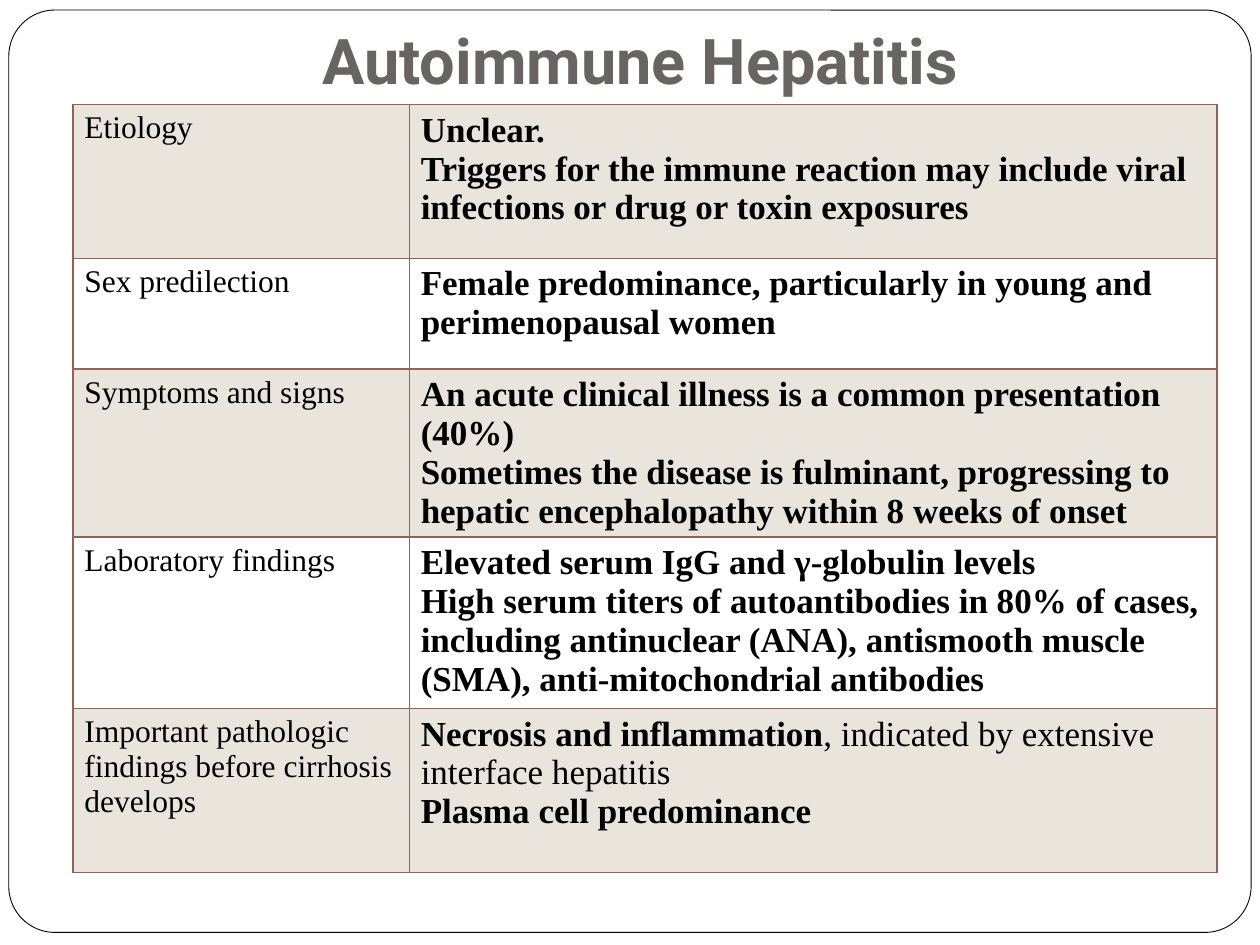
from lxml import etree
from pptx import Presentation
from pptx.dml.color import RGBColor
from pptx.enum.shapes import MSO_SHAPE as SHAPE
from pptx.enum.text import MSO_ANCHOR as ANCHOR, MSO_AUTO_SIZE as AUTOSIZE, PP_ALIGN as ALIGN
from pptx.oxml.ns import qn
from pptx.util import Inches, Pt

WHITE = RGBColor(0xFF, 0xFF, 0xFF)
BLACK = RGBColor(0x00, 0x00, 0x00)
GRAY = RGBColor(0x69, 0x64, 0x64)
BEIGE = RGBColor(0xE9, 0xE5, 0xDC)
BROWN = RGBColor(0x95, 0x62, 0x51)

# Each finding: label, then paragraphs made of (text, bold) runs
FINDINGS = [
    ("Etiology", [
        [("Unclear.", True)],
        [("Triggers for the immune reaction may include viral infections "
          "or drug or toxin exposures", True)]]),
    ("Sex predilection", [
        [("Female predominance, particularly in young and perimenopausal women", True)]]),
    ("Symptoms and signs", [
        [("An acute clinical illness is a common presentation (40%)", True)],
        [("Sometimes the disease is fulminant, progressing to hepatic "
          "encephalopathy within 8 weeks of onset", True)]]),
    ("Laboratory findings", [
        [("Elevated serum IgG and γ-globulin levels", True)],
        [("High serum titers of autoantibodies in 80% of cases, including antinuclear "
          "(ANA), antismooth muscle (SMA), anti-mitochondrial antibodies", True)]]),
    ("Important pathologic findings before cirrhosis develops", [
        [("Necrosis and inflammation", True),
         (", indicated by extensive interface hepatitis", False)],
        [("Plasma cell predominance", True)]]),
]
COL_WIDTHS = [2.67, 6.41]
ROW_HEIGHTS = [1.22, 0.88, 1.24, 1.36, 1.3]


def write(tf, paragraphs, size=20, font="Times New Roman", color=BLACK, align=ALIGN.LEFT):
    """Fill a text frame with paragraphs of (text, bold) runs."""
    for i, runs in enumerate(paragraphs):
        p = tf.add_paragraph() if i else tf.paragraphs[0]
        p.alignment = align
        for text, bold in runs:
            r = p.add_run()
            r.text = text
            r.font.name, r.font.size, r.font.bold = font, Pt(size), bold
            r.font.color.rgb = color


class SlideBuilder:
    border_color = BROWN
    border_width = Pt(1)
    band_fills = (BEIGE, WHITE)

    def __init__(self, slide):
        self.s = slide

    def frame(self, x, y, w, h):
        sp = self.s.shapes.add_shape(
            SHAPE.ROUNDED_RECTANGLE, Inches(x), Inches(y), Inches(w), Inches(h))
        sp.adjustments[0] = 0.05
        sp.shadow.inherit = False
        sp.fill.solid()
        sp.fill.fore_color.rgb = WHITE
        sp.line.color.rgb = BLACK
        sp.line.width = Pt(0.5)
        # Send behind the title
        self.s.shapes._spTree.insert(2, sp._element)

    def title(self, text, x, y, w, h):
        sp = self.s.shapes.title
        sp.left, sp.top, sp.width, sp.height = map(Inches, (x, y, w, h))
        tf = sp.text_frame
        tf.auto_size = AUTOSIZE.NONE
        tf.vertical_anchor = ANCHOR.TOP
        tf.margin_top = 0
        write(tf, [[(text, True)]], size=36, font="Roboto", color=GRAY, align=ALIGN.CENTER)

    def borders(self, cell):
        tc_pr = cell._tc.get_or_add_tcPr()
        for side in ("lnL", "lnR", "lnT", "lnB"):
            ln = etree.SubElement(tc_pr, qn(f"a:{side}"), w=str(self.border_width))
            fill = etree.SubElement(ln, qn("a:solidFill"))
            etree.SubElement(fill, qn("a:srgbClr"), val=str(self.border_color))

    def cell(self, cell, paragraphs, fill, size):
        cell.margin_left = cell.margin_right = Inches(0.09)
        cell.margin_top = cell.margin_bottom = Inches(0.05)
        self.borders(cell)
        cell.fill.solid()
        cell.fill.fore_color.rgb = fill
        write(cell.text_frame, paragraphs, size=size)

    def table(self, rows, x, y):
        table = self.s.shapes.add_table(
            len(rows), len(COL_WIDTHS), Inches(x), Inches(y),
            Inches(sum(COL_WIDTHS)), Inches(sum(ROW_HEIGHTS))).table
        table.first_row = table.horz_banding = False
        for col, width in zip(table.columns, COL_WIDTHS):
            col.width = Inches(width)
        for i, (label, details) in enumerate(rows):
            table.rows[i].height = Inches(ROW_HEIGHTS[i])
            fill = self.band_fills[i % 2]
            self.cell(table.cell(i, 0), [[(label, False)]], fill, 18)
            self.cell(table.cell(i, 1), details, fill, 20)


def main():
    prs = Presentation()
    prs.slide_width, prs.slide_height = Inches(10), Inches(7.5)
    builder = SlideBuilder(prs.slides.add_slide(prs.slide_layouts[5]))

    # Rounded frame, title and table of findings
    builder.frame(0.07, 0.08, 9.86, 7.32)
    builder.title("Autoimmune Hepatitis", 0.83, 0.17, 8.5, 1.25)
    builder.table(FINDINGS, 0.58, 0.83)

    prs.save("out.pptx")


if __name__ == "__main__":
    main()
